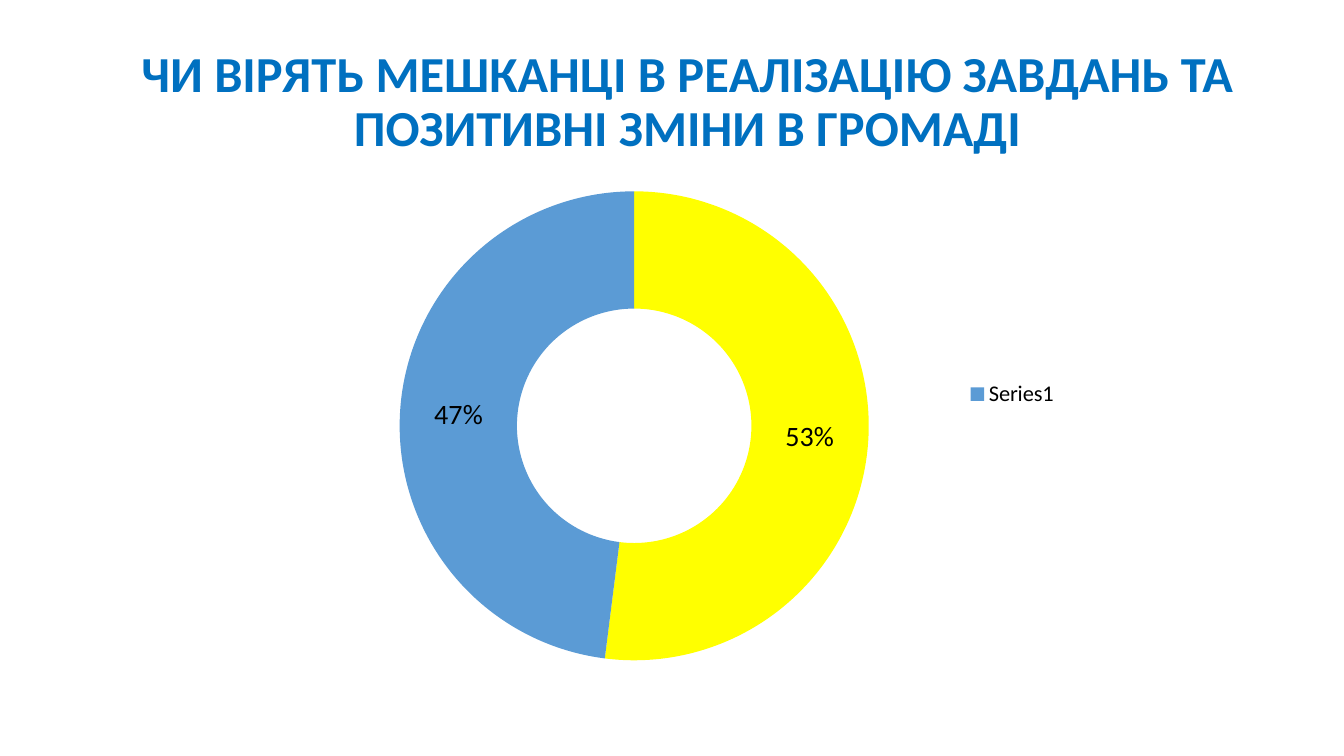
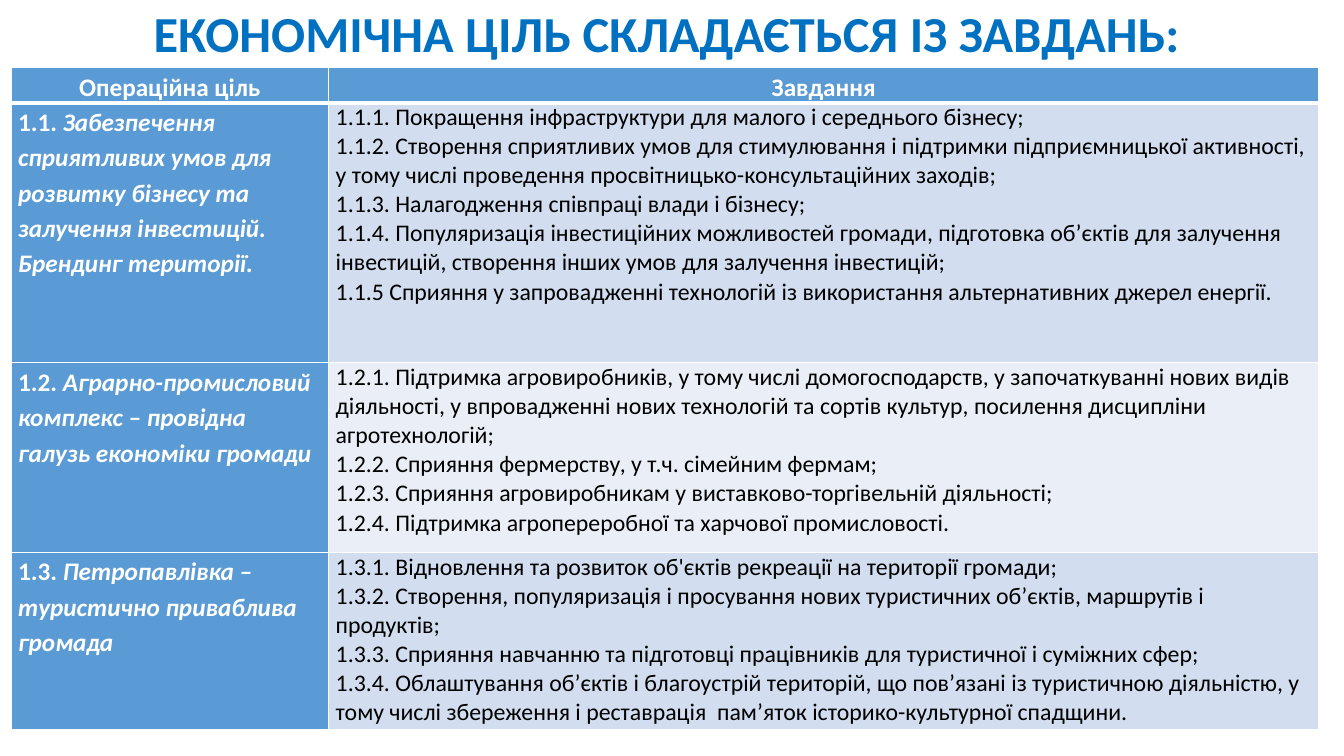
from dataclasses import dataclass

from lxml import etree
from pptx import Presentation
from pptx.chart.data import CategoryChartData
from pptx.dml.color import RGBColor
from pptx.enum.chart import XL_CHART_TYPE, XL_LEGEND_POSITION
from pptx.enum.text import MSO_ANCHOR, PP_ALIGN
from pptx.oxml.ns import qn
from pptx.util import Inches, Pt

DOUGHNUT = XL_CHART_TYPE.DOUGHNUT
LEGEND_RIGHT = XL_LEGEND_POSITION.RIGHT
MIDDLE = MSO_ANCHOR.MIDDLE
TOP = MSO_ANCHOR.TOP
CENTER = PP_ALIGN.CENTER
LEFT = PP_ALIGN.LEFT

FONT = "Calibri"
TITLE_BLUE = "0070C0"
BLUE = "5B9BD5"
YELLOW = "FFFF00"
BAND_DARK = "D2DEEF"
BAND_LIGHT = "EAEFF7"
WHITE = "FFFFFF"
BLACK = "000000"

BLANK_LAYOUT = 6
THIN, THICK = 1, 3


@dataclass(frozen=True)
class Box:
    left: float
    top: float
    width: float
    height: float

    def lengths(self) -> tuple:
        return tuple(Inches(n) for n in (self.left, self.top, self.width, self.height))


@dataclass(frozen=True)
class Goal:
    number: str
    name: str
    tasks: tuple[str, ...]
    height: float


@dataclass(frozen=True)
class Share:
    category: str
    value: int
    label: str
    color: str


SHARES = (
    Share("1", 52, "53%", YELLOW),
    Share("2", 48, "47%", BLUE),
)

HEADINGS = ("Операційна ціль", "Завдання")
HEADING_HEIGHT = 0.35
COLUMN_WIDTHS = (3.15, 9.82)

GOALS = (
    Goal(
        "1.1. ",
        "Забезпечення сприятливих умов для розвитку бізнесу та залучення інвестицій. Брендинг території.",
        (
            "1.1.1. Покращення інфраструктури для малого і середнього бізнесу;",
            "1.1.2. Створення сприятливих умов для стимулювання і підтримки підприємницької активності, "
            "у тому числі проведення просвітницько-консультаційних заходів;",
            "1.1.3. Налагодження співпраці влади і бізнесу;",
            "1.1.4. Популяризація інвестиційних можливостей громади, підготовка об’єктів для залучення "
            "інвестицій, створення інших умов для залучення інвестицій;",
            "1.1.5 Сприяння у запровадженні технологій із використання альтернативних джерел енергії.",
        ),
        2.58,
    ),
    Goal(
        "1.2. ",
        "Аграрно-промисловий комплекс – провідна галузь економіки громади",
        (
            "1.2.1. Підтримка агровиробників, у тому числі домогосподарств, у започаткуванні нових видів "
            "діяльності, у впровадженні нових технологій та сортів культур, посилення дисципліни агротехнологій;",
            "1.2.2. Сприяння фермерству, у т.ч. сімейним фермам;",
            "1.2.3. Сприяння агровиробникам у виставково-торгівельній діяльності;",
            "1.2.4. Підтримка агропереробної та харчової промисловості.",
        ),
        1.88,
    ),
    Goal(
        "1.3. ",
        "Петропавлівка – туристично приваблива громада",
        (
            "1.3.1. Відновлення та розвиток об'єктів рекреації на території громади;",
            "1.3.2. Створення, популяризація і просування нових туристичних об’єктів, маршрутів і продуктів;",
            "1.3.3. Сприяння навчанню та підготовці працівників для туристичної і суміжних сфер;",
            "1.3.4. Облаштування об’єктів і благоустрій територій, що пов’язані із туристичною діяльністю, "
            "у тому числі збереження і реставрація  пам’яток історико-культурної спадщини.",
        ),
        1.76,
    ),
)

ROW_HEIGHTS = (HEADING_HEIGHT, *(goal.height for goal in GOALS))


def rgb(color: str) -> RGBColor:
    return RGBColor.from_string(color)


def set_font(font, *, size: float, color: str, bold: bool = False, italic: bool = False) -> None:
    font.name = FONT
    font.size = Pt(size)
    font.bold = bold
    font.italic = italic
    font.color.rgb = rgb(color)


def write(para, text: str, *, align=LEFT, spacing: float = 1.0, **look) -> None:
    para.alignment = align
    para.line_spacing = spacing
    span = para.add_run()
    span.text = text
    set_font(span.font, **look)


def add_title(page, text: str, box: Box) -> None:
    frame = page.shapes.add_textbox(*box.lengths()).text_frame
    frame.word_wrap = True
    frame.vertical_anchor = MIDDLE
    write(frame.paragraphs[0], text, align=CENTER, spacing=0.9, size=36, color=TITLE_BLUE, bold=True)


def manual_layout(*, inner: bool = False, **fractions: float):
    layout = etree.Element(qn("c:layout"))
    manual = etree.SubElement(layout, qn("c:manualLayout"))
    if inner:
        etree.SubElement(manual, qn("c:layoutTarget"), val="inner")
    for mode in ("xMode", "yMode"):
        etree.SubElement(manual, qn(f"c:{mode}"), val="edge")
    for name, fraction in fractions.items():
        etree.SubElement(manual, qn(f"c:{name}"), val=str(fraction))
    return layout


def add_share_chart(page, box: Box) -> None:
    data = CategoryChartData()
    data.categories = [share.category for share in SHARES]
    data.add_series("Series1", [share.value for share in SHARES])
    chart = page.shapes.add_chart(DOUGHNUT, *box.lengths(), data).chart
    chart.has_title = False
    set_font(chart.font, size=10, color=BLACK)

    plot = chart.plots[0]
    plot.vary_by_categories = False
    series = plot.series[0]
    series.format.fill.solid()
    series.format.fill.fore_color.rgb = rgb(BLUE)
    for index, share in enumerate(SHARES):
        point = series.points[index]
        point.format.fill.solid()
        point.format.fill.fore_color.rgb = rgb(share.color)
        para = point.data_label.text_frame.paragraphs[0]
        write(para, share.label, align=CENTER, size=20, color=BLACK)

    chart.has_legend = True
    legend = chart.legend
    legend.position = LEGEND_RIGHT
    legend.include_in_layout = False
    set_font(legend.font, size=16, color=BLACK)

    area = chart.element.find(".//" + qn("c:plotArea"))
    legend_node = chart.element.find(".//" + qn("c:legend"))
    for node in (area, legend_node):
        for layout in node.findall(qn("c:layout")):
            node.remove(layout)
    area.insert(0, manual_layout(inner=True, x=0.17, y=0.03, w=0.54, h=0.94))
    legend_node.find(qn("c:legendPos")).addnext(manual_layout(x=0.81, y=0.4))


def set_borders(cell, *, top: float = THIN, bottom: float = THIN) -> None:
    properties = cell._tc.get_or_add_tcPr()
    widths = {"lnL": THIN, "lnR": THIN, "lnT": top, "lnB": bottom}
    for index, (side, width) in enumerate(widths.items()):
        line = etree.Element(qn(f"a:{side}"), w=str(Pt(width)))
        fill = etree.SubElement(line, qn("a:solidFill"))
        etree.SubElement(fill, qn("a:srgbClr"), val=WHITE)
        properties.insert(index, line)


def prepare_cell(cell, fill: str, **borders: float):
    cell.margin_left = cell.margin_right = Inches(0.07)
    cell.margin_top = cell.margin_bottom = Inches(0)
    cell.vertical_anchor = TOP
    cell.fill.solid()
    cell.fill.fore_color.rgb = rgb(fill)
    set_borders(cell, **borders)
    return cell.text_frame


def add_goal_table(page, box: Box) -> None:
    table = page.shapes.add_table(len(ROW_HEIGHTS), len(HEADINGS), *box.lengths()).table
    table.first_row = False
    table.horz_banding = False
    for column, width in zip(table.columns, COLUMN_WIDTHS):
        column.width = Inches(width)
    for row, height in zip(table.rows, ROW_HEIGHTS):
        row.height = Inches(height)

    strong = {"spacing": 1.15, "size": 18, "color": WHITE, "bold": True}
    for column, heading in enumerate(HEADINGS):
        frame = prepare_cell(table.cell(0, column), BLUE, bottom=THICK)
        write(frame.paragraphs[0], heading, align=CENTER, **strong)

    for row, goal in enumerate(GOALS, start=1):
        top = THICK if row == 1 else THIN
        name_para = prepare_cell(table.cell(row, 0), BLUE, top=top).paragraphs[0]
        write(name_para, goal.number, **strong)
        write(name_para, goal.name, italic=True, **strong)

        band = BAND_DARK if row % 2 else BAND_LIGHT
        frame = prepare_cell(table.cell(row, 1), band, top=top)
        for index, task in enumerate(goal.tasks):
            para = frame.add_paragraph() if index else frame.paragraphs[0]
            write(para, task, size=17, color=BLACK)


def main() -> None:
    deck = Presentation()
    deck.slide_width = Inches(13.33)
    deck.slide_height = Inches(7.5)
    blank = deck.slide_layouts[BLANK_LAYOUT]

    page = deck.slides.add_slide(blank)
    add_title(
        page,
        "ЧИ ВІРЯТЬ МЕШКАНЦІ В РЕАЛІЗАЦІЮ ЗАВДАНЬ ТА ПОЗИТИВНІ ЗМІНИ В ГРОМАДІ",
        Box(1.07, 0.3, 11.5, 1.45),
    )
    add_share_chart(page, Box(2.41, 1.75, 8.82, 4.95))

    page = deck.slides.add_slide(blank)
    add_title(page, "ЕКОНОМІЧНА ЦІЛЬ СКЛАДАЄТЬСЯ ІЗ ЗАВДАНЬ:", Box(0.26, 0, 12.71, 0.71))
    add_goal_table(page, Box(0.11, 0.67, sum(COLUMN_WIDTHS), sum(ROW_HEIGHTS)))

    deck.save("out.pptx")


if __name__ == "__main__":
    main()
